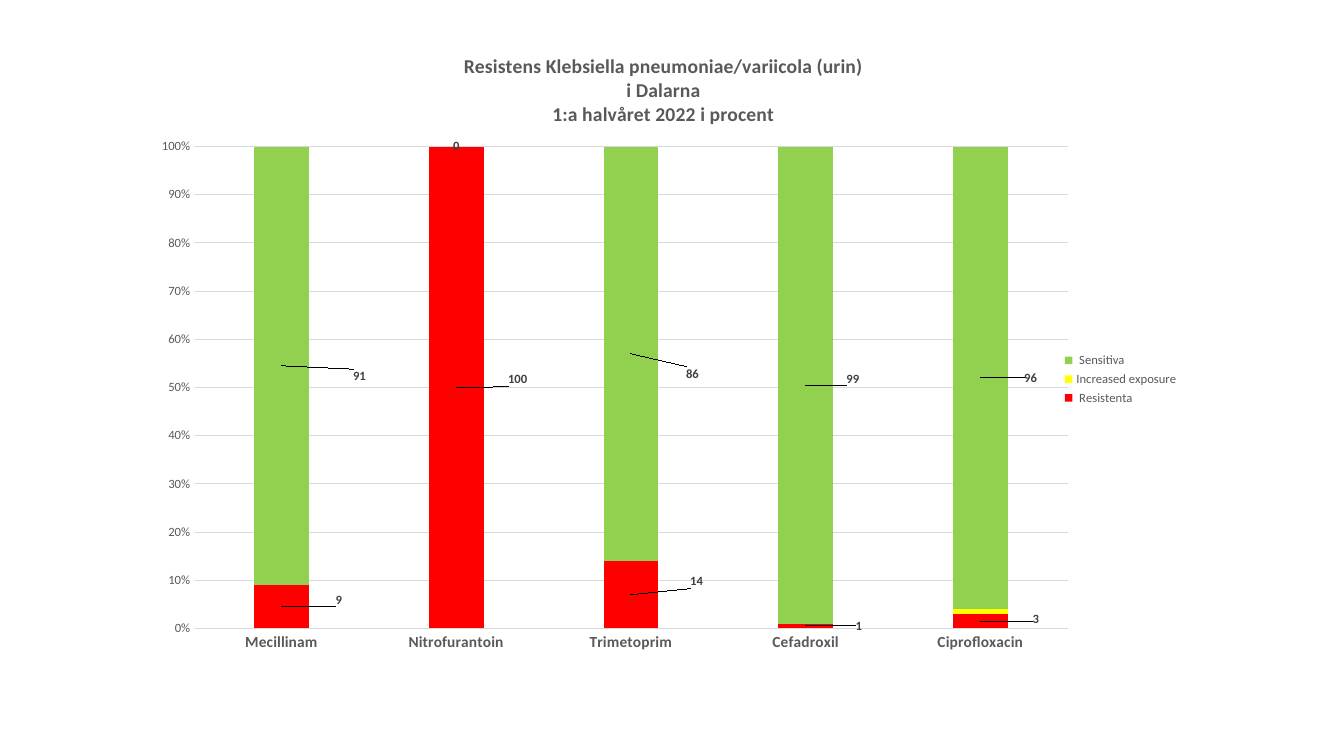
import lxml.etree
import pptx
import pptx.chart.data
import pptx.dml.color
import pptx.enum.chart
import pptx.oxml.ns
import pptx.util

Inches = pptx.util.Inches
qn = pptx.oxml.ns.qn

COLORS = {
    "resistant": "FF0000",
    "exposure": "FFFF00",
    "sensitive": "92D050",
    "text": "595959",
    "value": "404040",
    "grid": "D9D9D9",
}

ANTIBIOTICS = ["Mecillinam", "Nitrofurantoin", "Trimetoprim", "Cefadroxil", "Ciprofloxacin"]
RESULTS = [
    (" Resistenta", "resistant", (9, 100, 14, 1, 3)),
    ("Increased exposure", "exposure", (0, 0, 0, 0, 1)),
    (" Sensitiva", "sensitive", (91, 0, 86, 99, 96)),
]
LABEL_OFFSETS = {
    "resistant": {0: (5.6, -1), 1: (6, -1.2), 2: (6.4, -2), 3: (5.2, 0), 4: (5.4, -0.3)},
    "sensitive": {0: (7.6, 1.6), 2: (6, 3), 3: (4.6, -0.9), 4: (4.9, 0)},
}
HEADING = [
    "Resistens Klebsiella pneumoniae/variicola (urin)",
    "i Dalarna",
    "1:a halvåret 2022 i procent",
]


class ChartSlide:
    font_name = "Calibri"

    def __init__(self, presentation):
        self.slide = presentation.slides.add_slide(presentation.slide_layouts[6])

    def color(self, name):
        return pptx.dml.color.RGBColor.from_string(COLORS[name])

    def style(self, font, size, color="text", bold=False):
        font.name = self.font_name
        font.size = pptx.util.Pt(size)
        font.bold = bold
        font.color.rgb = self.color(color)

    def rule(self, line):
        line.color.rgb = self.color("grid")
        line.width = pptx.util.Pt(0.75)

    def place(self, element, percents, edge=True, inner=False):
        for old in element.findall(qn("c:layout")):
            element.remove(old)
        leaders = [qn("c:idx"), qn("c:tx"), qn("c:legendPos")]
        index = sum(child.tag in leaders for child in element)
        layout = lxml.etree.Element(qn("c:layout"))
        element.insert(index, layout)
        manual = lxml.etree.SubElement(layout, qn("c:manualLayout"))
        settings = [("layoutTarget", "inner")] if inner else []
        if edge:
            settings += [("xMode", "edge"), ("yMode", "edge")]
        settings += [(key, f"{percent / 100:.4f}") for key, percent in zip("xywh", percents)]
        for key, value in settings:
            lxml.etree.SubElement(manual, qn(f"c:{key}")).set("val", value)

    def stacked_chart(self, left, top, width, height):
        data = pptx.chart.data.CategoryChartData()
        data.categories = ANTIBIOTICS
        for name, _, values in RESULTS:
            data.add_series(name, values)
        kind = pptx.enum.chart.XL_CHART_TYPE.COLUMN_STACKED_100
        chart = self.slide.shapes.add_chart(
            kind, Inches(left), Inches(top), Inches(width), Inches(height), data).chart
        self.style(chart.font, 10)
        plot = chart.plots[0]
        plot.gap_width = 219
        plot.overlap = 100
        plot.vary_by_categories = False
        self.place(chart.element.find(".//" + qn("c:plotArea")), (3.4, 15.4, 85.2, 71.9), inner=True)
        for series, (_, role, _) in zip(plot.series, RESULTS):
            series.invert_if_negative = False
            series.format.fill.solid()
            series.format.fill.fore_color.rgb = self.color(role)
            if role in LABEL_OFFSETS:
                self.value_labels(series, LABEL_OFFSETS[role])
        return chart

    def value_labels(self, series, offsets):
        labels = series.data_labels
        labels.show_value = True
        self.style(labels.font, 9, "value", True)
        for index, offset in offsets.items():
            self.style(series.points[index].data_label.font, 9, "value", True)
            label = series.data_labels._element.xpath(f'c:dLbl[c:idx/@val="{index}"]')[0]
            self.place(label, offset, edge=False)

    def axes(self, chart):
        no_ticks = pptx.enum.chart.XL_TICK_MARK.NONE
        for axis, size, bold in ((chart.category_axis, 11, True), (chart.value_axis, 9, False)):
            axis.major_tick_mark = no_ticks
            axis.minor_tick_mark = no_ticks
            self.style(axis.tick_labels.font, size, bold=bold)
        self.rule(chart.category_axis.format.line)
        percent_axis = chart.value_axis
        percent_axis.minimum_scale = 0
        percent_axis.maximum_scale = 1
        percent_axis.major_unit = 0.1
        percent_axis.tick_labels.number_format = "0%"
        percent_axis.tick_labels.number_format_is_linked = False
        percent_axis.format.line.fill.background()
        self.rule(percent_axis.major_gridlines.format.line)

    def heading(self, chart, lines):
        frame = chart.chart_title.text_frame
        for number, text in enumerate(lines):
            paragraph = frame.add_paragraph() if number else frame.paragraphs[0]
            run = paragraph.add_run()
            run.text = text
            self.style(run.font, 14, bold=True)
        self.place(chart.chart_title._element, (29.4, 0.9))

    def legend(self, chart):
        chart.has_legend = True
        chart.legend.position = pptx.enum.chart.XL_LEGEND_POSITION.RIGHT
        chart.legend.include_in_layout = False
        self.style(chart.legend.font, 9)
        self.place(chart.legend._element, (87.5, 45.6, 12.5, 9))


def main():
    presentation = pptx.Presentation()
    presentation.slide_width = Inches(13.33)
    presentation.slide_height = Inches(7.5)
    page = ChartSlide(presentation)
    resistance = page.stacked_chart(1.58, 0.43, 10.17, 6.65)
    page.axes(resistance)
    page.heading(resistance, HEADING)
    page.legend(resistance)
    presentation.save("out.pptx")


if __name__ == "__main__":
    main()
